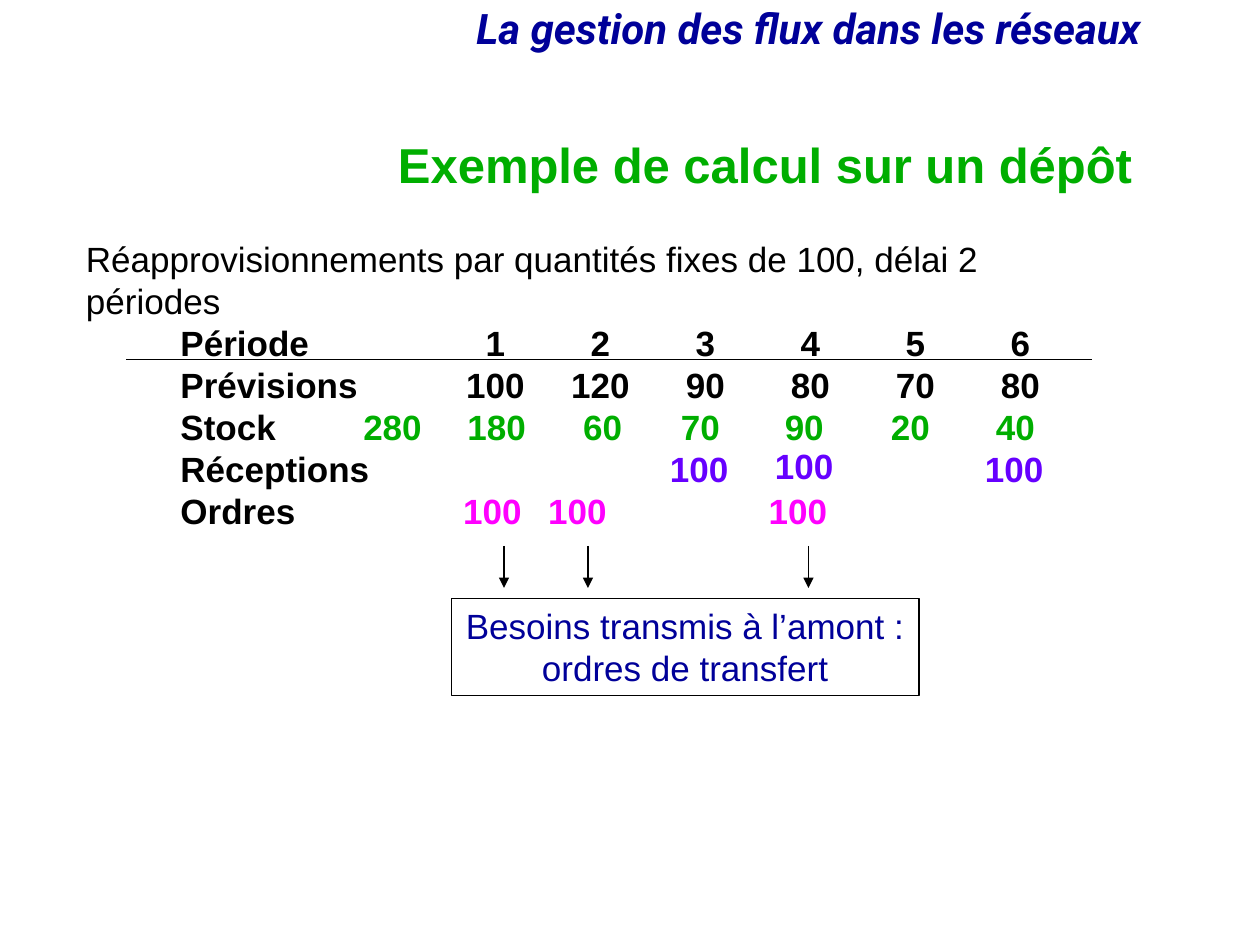
"""Builds the slide showing a replenishment calculation for one depot."""
from dataclasses import dataclass

from lxml.etree import SubElement
from pptx import Presentation
from pptx.dml.color import RGBColor as RGB
from pptx.enum.shapes import MSO_CONNECTOR as CONN, MSO_SHAPE as SHAPE
from pptx.enum.text import MSO_ANCHOR as ANCHOR, PP_ALIGN as ALIGN
from pptx.oxml import parse_xml
from pptx.oxml.ns import nsdecls, qn
from pptx.util import Inches, Pt


@dataclass(frozen=True)
class Theme:
    black: str = "000000"
    navy: str = "000099"
    green: str = "00AE00"
    violet: str = "6600FF"
    magenta: str = "FF00FF"
    font: str = "Arial"
    banner_font: str = "Roboto"
    body: int = 20
    banner: int = 24
    title: int = 28
    line: float = 1


class Deck:
    COL = Inches(10) / 12
    ROW = Inches(7.5) / 22.5

    def __init__(self, theme):
        self.theme = theme
        self.prs = Presentation()
        self.prs.slide_width, self.prs.slide_height = Inches(10), Inches(7.5)
        self.s = self.prs.slides.add_slide(self.prs.slide_layouts[6])

    def x(self, cols):
        return round(cols * self.COL)

    def y(self, rows):
        return round(rows * self.ROW)

    def box(self, col, row, cols, rows):
        return self.x(col), self.y(row), self.x(cols), self.y(rows)

    def style(self, p, color, size=None, bold=False, italic=False, font=None):
        p.font.name = font or self.theme.font
        p.font.size = Pt(size or self.theme.body)
        p.font.bold, p.font.italic = bold, italic
        p.font.color.rgb = RGB.from_string(color)

    def text(self, area, text, color, align=ALIGN.LEFT, anchor=ANCHOR.TOP,
             spacing=None, wrap=True, **look):
        tf = self.s.shapes.add_textbox(*self.box(*area)).text_frame
        tf.word_wrap, tf.vertical_anchor = wrap, anchor
        p = tf.paragraphs[0]
        p.text, p.alignment = text, align
        if spacing:
            p.line_spacing = spacing
        self.style(p, color, **look)

    def value(self, center, row, number, color):
        cols = 0.82 if number > 99 else 0.63
        self.text((center - cols / 2, row, cols, 1.29), str(number), color,
                  align=ALIGN.CENTER, wrap=False, bold=True)

    def tabbed(self, area, lines, stops):
        tf = self.s.shapes.add_textbox(*self.box(*area)).text_frame
        tf.word_wrap = True
        for i, line in enumerate(lines):
            p = tf.add_paragraph() if i else tf.paragraphs[0]
            for text, color in line:
                r = p.add_run()
                r.text = text
                if color != self.theme.black:
                    r.font.color.rgb = RGB.from_string(color)
            self.style(p, self.theme.black, bold=True)
            tabs = parse_xml(f"<a:tabLst {nsdecls('a')}/>")
            for stop in stops:
                SubElement(tabs, qn("a:tab"), pos=str(self.x(stop)), algn="ctr")
            p._p.get_or_add_pPr().insert(0, tabs)

    def line(self, start, end, arrow=False):
        c = self.s.shapes.add_connector(
            CONN.STRAIGHT, self.x(start[0]), self.y(start[1]),
            self.x(end[0]), self.y(end[1]))
        c.line.color.rgb = RGB.from_string(self.theme.black)
        c.line.width = Pt(self.theme.line)
        if arrow:
            SubElement(c.line._get_or_add_ln(), qn("a:tailEnd"), type="triangle")
        SubElement(c._element.spPr, qn("a:effectLst"))

    def frame(self, area, text, color):
        sp = self.s.shapes.add_shape(SHAPE.RECTANGLE, *self.box(*area))
        sp.shadow.inherit = False
        sp.fill.background()
        sp.line.color.rgb = RGB.from_string(self.theme.black)
        sp.line.width = Pt(self.theme.line)
        tf = sp.text_frame
        tf.word_wrap, tf.vertical_anchor = False, ANCHOR.TOP
        p = tf.paragraphs[0]
        p.text, p.alignment = text, ALIGN.CENTER
        self.style(p, color)


def main():
    t = Theme()
    d = Deck(t)
    d.text((4.42, 0.05, 7.61, 1.38), "La gestion des flux dans les réseaux",
           t.navy, spacing=0.9, size=t.banner, bold=True, italic=True,
           font=t.banner_font)
    d.text((1.4, 3.24, 9.5, 1.5), "Exemple de calcul sur un dépôt", t.green,
           align=ALIGN.RIGHT, anchor=ANCHOR.MIDDLE, spacing=0.9,
           size=t.title, bold=True)
    d.text((0.7, 5.5, 10.09, 1.29),
           "Réapprovisionnements par quantités fixes de 100, délai 2 périodes",
           t.black)

    d.tabbed((1.6, 7.5, 8.92, 5.31), [
        [("Période\t\t1\t2\t3\t4\t5\t6", t.black)],
        [("Prévisions\t\t100\t120\t90\t80\t70\t80", t.black)],
        [("Stock\t", t.black), ("280", t.green)],
        [("Réceptions", t.black)],
        [("Ordres", t.black)],
    ], stops=(2.02, *range(3, 9)))
    d.line((1.2, 8.56), (10.4, 8.56))

    stock = zip((4.73, 5.74, 6.67, 7.66, 8.67, 9.67), (180, 60, 70, 90, 20, 40))
    for center, number in stock:
        d.value(center, 9.5, number, t.green)
    for center, row in ((6.66, 10.5), (7.66, 10.44), (9.66, 10.5)):
        d.value(center, row, 100, t.violet)
    for center, arrow in ((4.69, 4.8), (5.5, 5.6), (7.6, 7.7)):
        d.value(center, 11.5, 100, t.magenta)
        d.line((arrow, 13), (arrow, 14), arrow=True)

    d.frame((4.3, 14.25, 4.45, 2.31),
            "Besoins transmis à l’amont :\vordres de transfert", t.navy)
    d.prs.save("out.pptx")


if __name__ == "__main__":
    main()
